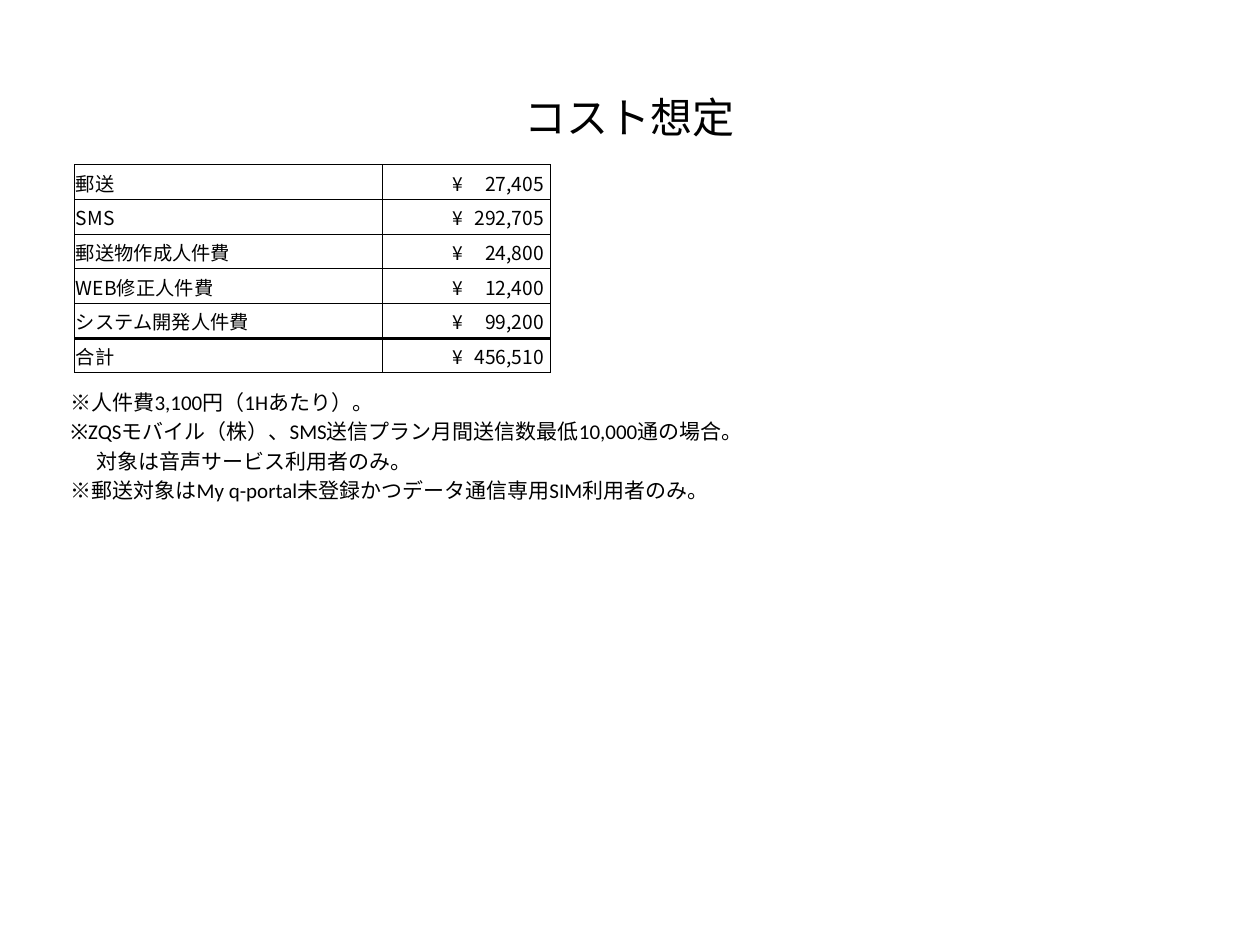
from dataclasses import dataclass

from lxml import etree
from pptx import Presentation
from pptx.dml.color import RGBColor
from pptx.enum import text
from pptx.oxml import ns
from pptx.util import Cm, Pt


@dataclass(frozen=True)
class Theme:
    ink: RGBColor = RGBColor(0, 0, 0)
    text_font: str = "Calibri"
    table_font: str = "Noto Sans CJK JP"
    title_size: int = 24
    note_size: int = 12
    table_size: int = 11
    thin: float = 0.5
    thick: float = 2


THEME = Theme()

COSTS = [
    ("郵送", "27,405"),
    ("SMS", "292,705"),
    ("郵送物作成人件費", "24,800"),
    ("WEB修正人件費", "12,400"),
    ("システム開発人件費", "99,200"),
    ("合計", "456,510"),
]

HANGING = (Cm(0.95), Cm(-0.95))
CONTINUED = (Cm(0.53), Cm(0))
NOTES = [
    ("※人件費3,100円（1Hあたり）。", HANGING),
    ("※ZQSモバイル（株）、SMS送信プラン月間送信数最低10,000通の場合。", HANGING),
    ("対象は音声サービス利用者のみ。", CONTINUED),
    ("※郵送対象はMy q-portal未登録かつデータ通信専用SIM利用者のみ。", HANGING),
]


def place(shape, left, top, width, height):
    shape.left, shape.top = Cm(left), Cm(top)
    shape.width, shape.height = Cm(width), Cm(height)


def style(paragraph, font_name, size):
    paragraph.font.name = font_name
    paragraph.font.size = Pt(size)
    paragraph.font.color.rgb = THEME.ink


def fill_title(shape, title):
    place(shape, 1.27, 0.76, 22.86, 3.18)
    shape.text_frame.text = title
    paragraph = shape.text_frame.paragraphs[0]
    paragraph.alignment = text.PP_ALIGN.CENTER
    style(paragraph, THEME.text_font, THEME.title_size)


def fill_notes(shape, notes):
    place(shape, 1.17, 7.72, 13.72, 2.87)
    frame = shape.text_frame
    frame.auto_size = text.MSO_AUTO_SIZE.NONE
    frame.text = "\n".join(note for note, _ in notes)
    for paragraph, (_, (margin, indent)) in zip(frame.paragraphs, notes):
        style(paragraph, THEME.text_font, THEME.note_size)
        properties = paragraph._p.get_or_add_pPr()
        properties.set("marL", str(margin))
        properties.set("indent", str(indent))
        properties.insert(0, etree.Element(ns.qn("a:buNone")))


def add_border(cell, side, width):
    properties = cell._tc.get_or_add_tcPr()
    line = etree.SubElement(properties, ns.qn(f"a:ln{side}"), w=str(Pt(width)))
    fill = etree.SubElement(line, ns.qn("a:solidFill"))
    etree.SubElement(fill, ns.qn("a:srgbClr"), val=str(THEME.ink))


def add_right_tab(paragraph, position):
    properties = paragraph._p.get_or_add_pPr()
    tabs = etree.Element(ns.qn("a:tabLst"))
    etree.SubElement(tabs, ns.qn("a:tab"), pos=str(position), algn="r")
    properties.insert(0, tabs)


def fill_cell(cell, content, top_width, bottom_width):
    cell.text = content
    cell.vertical_anchor = text.MSO_ANCHOR.MIDDLE
    cell.margin_left = cell.margin_right = cell.margin_top = Cm(0.03)
    cell.margin_bottom = 0
    style(cell.text_frame.paragraphs[0], THEME.table_font, THEME.table_size)
    widths = {"L": THEME.thin, "R": THEME.thin, "T": top_width, "B": bottom_width}
    for side, width in widths.items():
        add_border(cell, side, width)
    cell.fill.background()


def add_cost_table(slide, costs):
    frame = slide.shapes.add_table(
        len(costs), 2, Cm(1.5), Cm(3.32), Cm(9.6), Cm(0.7 * len(costs)))
    table = frame.table
    table.first_row = table.horz_banding = False
    table.columns[0].width, table.columns[1].width = Cm(6.2), Cm(3.4)
    total = len(costs) - 1
    for index, (label, amount) in enumerate(costs):
        top = THEME.thick if index == total else THEME.thin
        bottom = THEME.thick if index == total - 1 else THEME.thin
        fill_cell(table.cell(index, 0), label, top, bottom)
        amount_cell = table.cell(index, 1)
        fill_cell(amount_cell, f"¥\t{amount}", top, bottom)
        amount_cell.margin_left = Cm(1.42)
        add_right_tab(amount_cell.text_frame.paragraphs[0], Cm(1.85))


def main():
    presentation = Presentation()
    presentation.slide_width, presentation.slide_height = Cm(25.4), Cm(19.05)
    slide = presentation.slides.add_slide(presentation.slide_layouts[1])
    fill_title(slide.shapes.title, "コスト想定")
    fill_notes(slide.placeholders[1], NOTES)
    add_cost_table(slide, COSTS)
    presentation.save("out.pptx")


if __name__ == "__main__":
    main()
